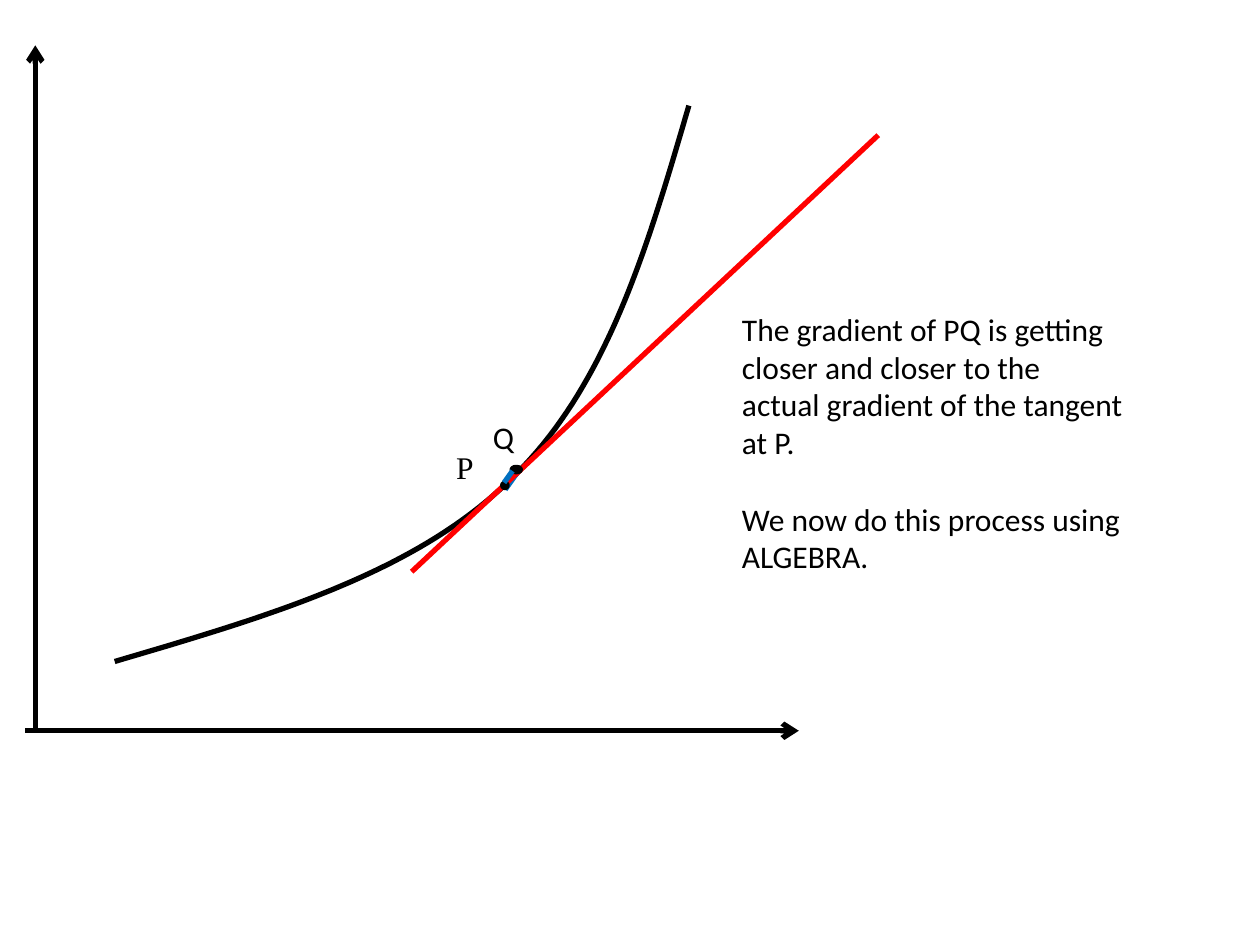
from dataclasses import dataclass

from lxml import etree
from pptx import Presentation
from pptx import util as u
from pptx.dml.color import RGBColor
from pptx.enum import shapes, text
from pptx.oxml.ns import qn


@dataclass(frozen=True)
class Theme:
    ink: RGBColor = RGBColor(0, 0, 0)
    tangent: RGBColor = RGBColor(255, 0, 0)
    chord: RGBColor = RGBColor(0, 112, 192)
    body: str = "Calibri"
    serif: str = "Times New Roman"
    size: float = 18
    line: float = 3
    thick: float = 4.5
    outline: float = 2
    paragraph_gap: float = 22


THEME = Theme()


@dataclass(frozen=True)
class Box:
    left: int
    top: int
    width: int
    height: int

    def point(self, x, y):
        """Position at x percent from the left and y percent from the bottom."""
        return (round(self.left + self.width * x / 100),
                round(self.top + self.height * (100 - y) / 100))

    def size(self, w, h):
        return round(self.width * w / 100), round(self.height * h / 100)


def slide_box(prs, left, top, width, height):
    """Box given as percentages of the slide."""
    w, h = prs.slide_width, prs.slide_height
    return Box(*(round(full * share / 100) for full, share in
                 ((w, left), (h, top), (w, width), (h, height))))


def add_line(slide, box, start, end, color, width=THEME.line, arrow=False):
    line = slide.shapes.add_connector(
        shapes.MSO_CONNECTOR.STRAIGHT, *box.point(*start), *box.point(*end))
    line.line.color.rgb = color
    line.line.width = u.Pt(width)
    sp_pr = line._element.spPr
    if arrow:
        etree.SubElement(sp_pr.find(qn("a:ln")), qn("a:tailEnd"), type="arrow")
    etree.SubElement(sp_pr, qn("a:effectLst"))


def add_text(slide, left, top, width, height, paragraphs, font=THEME.body):
    tf = slide.shapes.add_textbox(left, top, width, height).text_frame
    tf.word_wrap = True
    tf.auto_size = text.MSO_AUTO_SIZE.SHAPE_TO_FIT_TEXT
    tf.text = "\n".join(paragraphs)
    for i, p in enumerate(tf.paragraphs):
        if i:
            p.space_before = u.Pt(THEME.paragraph_gap)
        for r in p.runs:
            r.font.name = font
            r.font.size = u.Pt(THEME.size)
            r.font.color.rgb = THEME.ink


def bezier(p0, p1, p2, p3, steps=40):
    for i in range(steps + 1):
        t = i / steps
        s = 1 - t
        yield tuple(s**3 * a + 3 * s * s * t * b + 3 * s * t * t * c + t**3 * d
                    for a, b, c, d in zip(p0, p1, p2, p3))


def add_curve(slide, box):
    knots = [(10.4, 10.1), (29.9, 16.5), (49.5, 22.8), (62, 36.4),
             (74.8, 49.8), (80.2, 70.6), (85.6, 91.2)]
    lower, upper = bezier(*knots[:4]), bezier(*knots[3:])
    points = [box.point(*xy) for xy in [*lower, *list(upper)[1:]]]
    builder = slide.shapes.build_freeform(*points[0])
    builder.add_line_segments(points[1:], close=False)
    curve = builder.convert_to_shape()
    curve.shadow.inherit = False
    curve.fill.background()
    curve.line.color.rgb = THEME.ink
    curve.line.width = u.Pt(THEME.line)


def add_dot(slide, box, center, size):
    x, y = box.point(*center)
    w, h = box.size(*size)
    dot = slide.shapes.add_shape(
        shapes.MSO_SHAPE.OVAL, x - w // 2, y - h // 2, w, h)
    dot.shadow.inherit = False
    dot.fill.solid()
    dot.fill.fore_color.rgb = THEME.ink
    dot.line.color.rgb = THEME.ink
    dot.line.width = u.Pt(THEME.outline)


def add_graph(slide, box):
    """Axes span the box; the curve, tangent and chord PQ lie on them."""
    add_curve(slide, box)
    add_line(slide, box, (-1.3, 0), (100, 0), THEME.ink, arrow=True)
    add_line(slide, box, (0, 0), (0, 100), THEME.ink, arrow=True)
    for name, corner, width, font in (("P", (53.5, 42.1), 6.4, THEME.serif),
                                      ("Q", (58.3, 46.5), 7.1, THEME.body)):
        add_text(slide, *box.point(*corner), *box.size(width, 7.4), [name], font)
    add_line(slide, box, (61.4, 35.3), (63.4, 38.4), THEME.chord, THEME.thick)
    add_line(slide, box, (49.3, 23.2), (110.4, 86.9), THEME.tangent)
    add_dot(slide, box, (61.5, 35.8), (0.8, 0.9))
    add_dot(slide, box, (63, 38.1), (1.3, 0.9))
    add_line(slide, box, (61.4, 36.2), (62.5, 37.9), THEME.chord)


def add_explanation(slide, box):
    add_text(slide, box.left, box.top, box.width, box.height, [
        "The gradient of PQ is getting closer and closer to the actual "
        "gradient of the tangent at P.",
        "We now do this process using ALGEBRA.",
    ])


def main():
    prs = Presentation()
    prs.slide_width, prs.slide_height = u.Inches(10), u.Inches(7.5)
    slide = prs.slides.add_slide(prs.slide_layouts[6])
    add_graph(slide, slide_box(prs, 2.8, 4.8, 60.6, 72.53))
    add_explanation(slide, slide_box(prs, 57.9, 32.13, 32.3, 29.6))
    prs.save("out.pptx")


if __name__ == "__main__":
    main()
